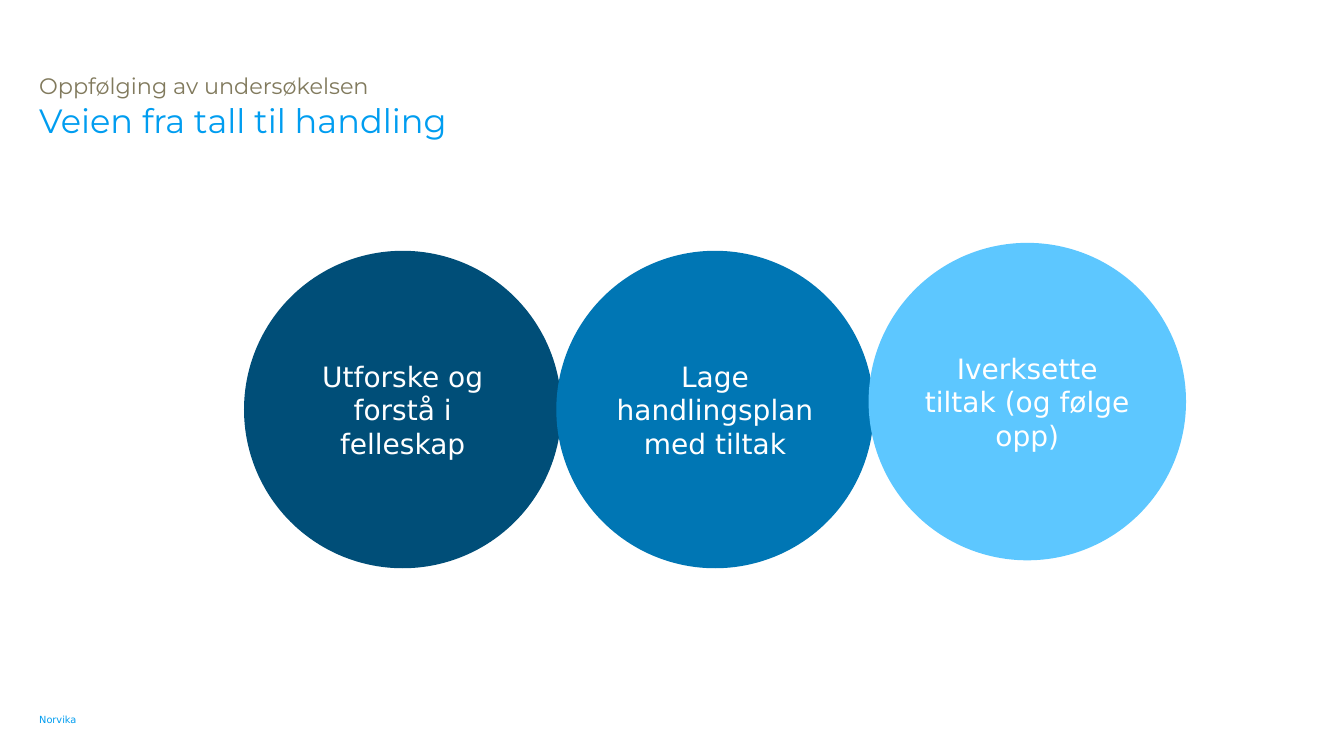
from pptx import Presentation
from pptx.dml.color import RGBColor
from pptx.enum.shapes import MSO_SHAPE
from pptx.enum.text import MSO_ANCHOR, PP_ALIGN
from pptx.util import Cm, Pt

OVAL = MSO_SHAPE.OVAL
TOP, MIDDLE, BOTTOM = MSO_ANCHOR.TOP, MSO_ANCHOR.MIDDLE, MSO_ANCHOR.BOTTOM
CENTER = PP_ALIGN.CENTER


def color(hex_code):
    return RGBColor.from_string(hex_code)


class SlideBuilder:
    """Holds the deck's style and the slide being built."""

    heading_font = "Montserrat"
    body_font = "DejaVu Sans"
    accent = "009DF0"
    muted = "817A5D"
    white = "FFFFFF"

    def __init__(self, presentation):
        self.slide = presentation.slides.add_slide(presentation.slide_layouts[6])

    def format_paragraph(self, paragraph, font_name, size, hex_code):
        for run in paragraph.runs:
            run.font.name = font_name
            run.font.size = Pt(size)
            run.font.color.rgb = color(hex_code)

    def text_box(self, left, top, width, height, lines, font_name, anchor=TOP):
        box = self.slide.shapes.add_textbox(Cm(left), Cm(top), Cm(width), Cm(height))
        frame = box.text_frame
        frame.word_wrap = True
        frame.vertical_anchor = anchor
        frame.margin_left = frame.margin_right = 0
        frame.margin_top = frame.margin_bottom = 0
        frame.text = "\n".join(text for text, size, hex_code in lines)
        for paragraph, (text, size, hex_code) in zip(frame.paragraphs, lines):
            self.format_paragraph(paragraph, font_name, size, hex_code)

    def circle(self, left, top, diameter, text, fill):
        shape = self.slide.shapes.add_shape(
            OVAL, Cm(left), Cm(top), Cm(diameter), Cm(diameter))
        shape.shadow.inherit = False
        shape.fill.solid()
        shape.fill.fore_color.rgb = color(fill)
        shape.line.fill.background()
        frame = shape.text_frame
        frame.word_wrap = True
        frame.vertical_anchor = MIDDLE
        frame.margin_left = frame.margin_right = Cm(0.2)
        frame.margin_top = frame.margin_bottom = Cm(0.1)
        frame.text = text
        paragraph = frame.paragraphs[0]
        paragraph.alignment = CENTER
        self.format_paragraph(paragraph, self.body_font, 20, self.white)


def main():
    presentation = Presentation()
    presentation.slide_width = Cm(33.87)
    presentation.slide_height = Cm(19.05)
    builder = SlideBuilder(presentation)

    builder.text_box(0.99, 17.68, 2.16, 0.61, [("Norvika", 7, builder.accent)],
                     builder.body_font, BOTTOM)
    heading = [
        ("Oppfølging av undersøkelsen", 16, builder.muted),
        ("Veien fra tall til handling", 24, builder.accent),
    ]
    builder.text_box(0.99, 1.83, 29.11, 2.59, heading, builder.heading_font)

    steps = [
        ("Utforske og forstå i felleskap", "004E78", 6.32),
        ("Lage handlingsplan med tiltak", "0076B4", 6.32),
        ("Iverksette tiltak (og følge opp)", "5DC7FF", 6.12),
    ]
    first_left, pitch, diameter = 6.15, 7.87, 8
    for index, (text, fill, top) in enumerate(steps):
        builder.circle(first_left + index * pitch, top, diameter, text, fill)

    presentation.save("out.pptx")


if __name__ == "__main__":
    main()
